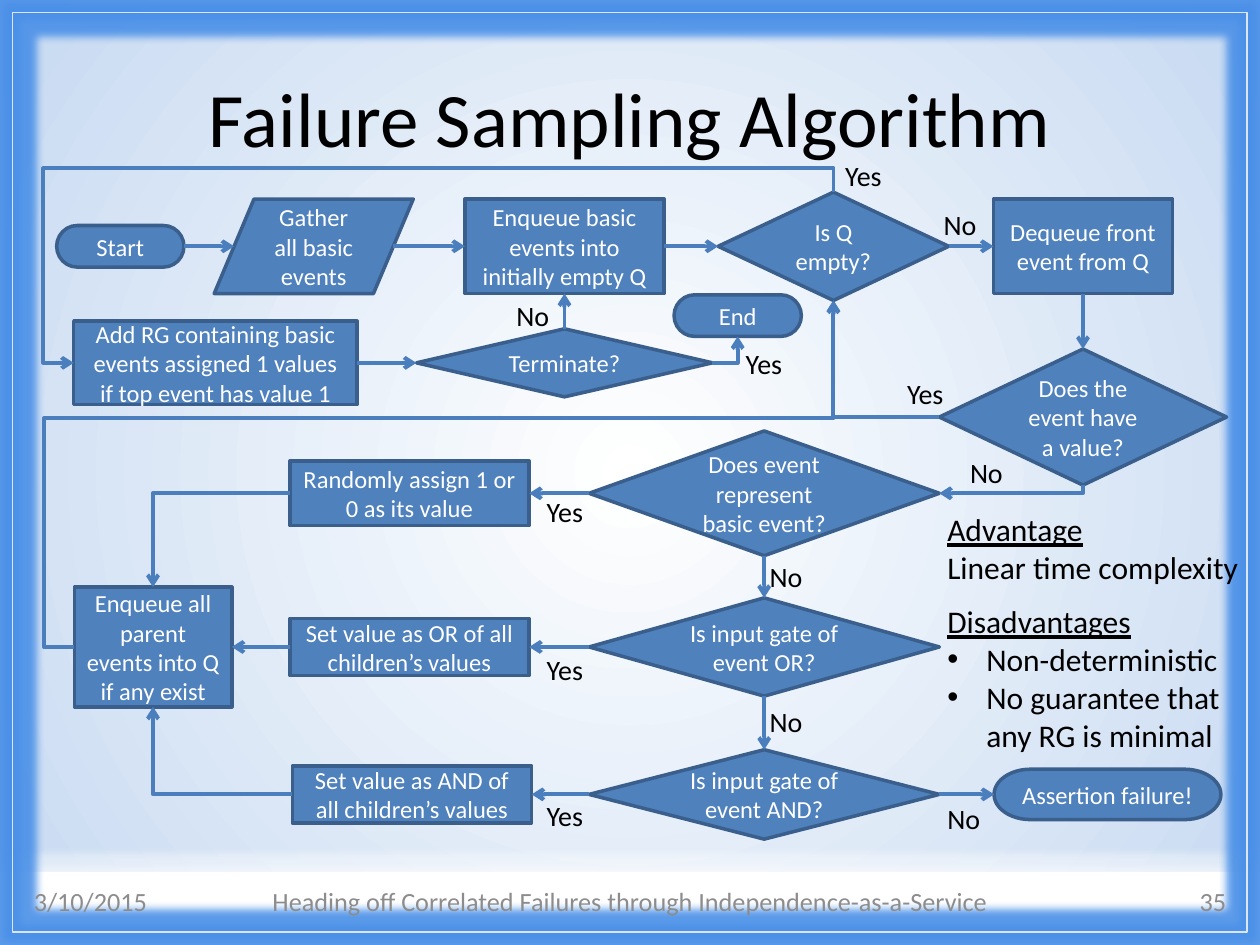
from typing import NamedTuple

from lxml.etree import SubElement
from pptx import Presentation
from pptx.dml.color import RGBColor
from pptx.enum.shapes import MSO_CONNECTOR, MSO_SHAPE
from pptx.enum.text import MSO_ANCHOR, MSO_AUTO_SIZE, PP_ALIGN
from pptx.oxml.ns import qn
from pptx.util import Emu, Inches, Pt

FONT = "Calibri"
COLORS = {
    "box": "4F81BD", "edge": "3A5F8C", "arrow": "4B7EBC", "on_box": "FFFFFF",
    "text": "000000", "footer": "8C8C8C", "strip": "FFFFFF", "frame": "DCE6F2",
    "glow": "4A90E8", "center": "FFFFFF", "rim": "C6D9F1",
}
COLUMNS, ROWS = 100, 75
WIDTH, HEIGHT = Inches(10), Inches(7.5)
CELL = WIDTH // COLUMNS

TOP, BOTTOM, LEFT, RIGHT = 0, 2, 1, 3
DECISION, PROCESS = MSO_SHAPE.FLOWCHART_DECISION, MSO_SHAPE.FLOWCHART_PROCESS
TERMINATOR, DATA = MSO_SHAPE.FLOWCHART_TERMINATOR, MSO_SHAPE.FLOWCHART_DATA

# Centres shared by the steps of the flow
FIRST, SECOND, BASIC, OR, AND = 19.55, 28.8, 39.15, 51.35, 63.05
PARENTS, ASSIGN, QUEUE, GATE, EMPTY, FRONT = 12.15, 32.5, 44.8, 60.65, 66.15, 85.95


class Step(NamedTuple):
    kind: MSO_SHAPE
    column: float
    row: float
    columns: float
    rows: float
    text: str


class Arrow(NamedTuple):
    start: str
    start_side: int
    end: str
    end_side: int


class Elbow(NamedTuple):
    start: str
    start_side: int
    end: str
    end_side: int
    bends: tuple[float, ...] = ()


class Label(NamedTuple):
    text: str
    column: float
    row: float


STEPS = {
    "start": Step(TERMINATOR, 9.55, FIRST, 10.1, 3.3, "Start"),
    "gather": Step(DATA, 24.9, FIRST, 15.8, 7.5, "Gather all basic events"),
    "enqueue": Step(PROCESS, QUEUE, FIRST, 15.8, 7.5,
                    "Enqueue basic events into initially empty Q"),
    "empty": Step(DECISION, EMPTY, FIRST, 18.3, 8.6, "Is Q empty?"),
    "dequeue": Step(PROCESS, FRONT, FIRST, 14.2, 7.5, "Dequeue front event from Q"),
    "add": Step(PROCESS, 17.1, SECOND, 22.5, 6.6,
                "Add RG containing basic events assigned 1 values if top event has value 1"),
    "terminate": Step(DECISION, QUEUE, SECOND, 23.5, 5.4, "Terminate?"),
    "end": Step(TERMINATOR, 58.55, 25.05, 10.1, 3.3, "End"),
    "valued": Step(DECISION, FRONT, 33.1, 22.8, 10.8, "Does the event have a value?"),
    "basic": Step(DECISION, GATE, BASIC, 27.8, 9.9, "Does event represent basic event?"),
    "or": Step(DECISION, GATE, OR, 27.8, 7.8, "Is input gate of event OR?"),
    "and": Step(DECISION, GATE, AND, 27.8, 7.1, "Is input gate of event AND?"),
    "random": Step(PROCESS, ASSIGN, BASIC, 19, 5.1, "Randomly assign 1 or 0 as its value"),
    "set_or": Step(PROCESS, ASSIGN, OR, 19, 4.5, "Set value as OR of all children’s values"),
    "set_and": Step(PROCESS, ASSIGN + 0.2, AND, 19, 4.5,
                    "Set value as AND of all children’s values"),
    "parents": Step(PROCESS, PARENTS, OR, 12.5, 9.5,
                    "Enqueue all parent events into Q if any exist"),
    "failure": Step(TERMINATOR, 87.9, AND, 18, 4, "Assertion failure!"),
}
RIGHTWARD = [("start", "gather"), ("gather", "enqueue"), ("enqueue", "empty"),
             ("empty", "dequeue"), ("add", "terminate"), ("and", "failure")]
LEFTWARD = [("basic", "random"), ("or", "set_or"), ("and", "set_and"), ("set_or", "parents")]
DOWNWARD = [("dequeue", "valued"), ("basic", "or"), ("or", "and")]
ARROWS = (
    [Arrow(a, RIGHT, b, LEFT) for a, b in RIGHTWARD]
    + [Arrow(a, LEFT, b, RIGHT) for a, b in LEFTWARD]
    + [Arrow(a, BOTTOM, b, TOP) for a, b in DOWNWARD]
    + [Arrow("terminate", TOP, "enqueue", BOTTOM)]
)
ELBOWS = [
    Elbow("empty", TOP, "add", LEFT, (-0.14, 1.04)),
    Elbow("parents", LEFT, "empty", BOTTOM, (-0.04, 0.66)),
    Elbow("valued", BOTTOM, "basic", RIGHT),
    Elbow("valued", LEFT, "empty", BOTTOM),
    Elbow("random", LEFT, "parents", TOP),
    Elbow("set_and", LEFT, "parents", BOTTOM),
    Elbow("terminate", RIGHT, "end", BOTTOM),
]
LABELS = [
    Label("Yes", 66.1, 12.1), Label("No", 73.9, 16), Label("Yes", 71, 29.4),
    Label("No", 76, 35.7), Label("Yes", 58.2, 27), Label("No", 40, 23.2),
    Label("Yes", 42.4, 38.8), Label("Yes", 42.4, 51.3), Label("Yes", 42.4, 62.9),
    Label("No", 60.1, 43.9), Label("No", 60.1, 55.4), Label("No", 74.2, 63.1),
]


def cells(*counts: float) -> list[Emu]:
    return [Emu(round(count * CELL)) for count in counts]


def rgb(name: str) -> RGBColor:
    return RGBColor.from_string(COLORS[name])


def add_run(paragraph, text: str, size: float, color: str, underline: bool = False) -> None:
    run = paragraph.add_run()
    run.text = text
    run.font.name, run.font.size = FONT, Pt(size)
    run.font.color.rgb = rgb(color)
    if underline:
        run.font.underline = True


def add_glow(shape, color: str, radius: Emu, percent: int) -> None:
    effects = shape._element.spPr.find(qn("a:effectLst"))
    glow = SubElement(effects, qn("a:glow"), rad=str(radius))
    tint = SubElement(glow, qn("a:srgbClr"), val=COLORS[color])
    SubElement(tint, qn("a:alpha"), val=str(percent * 1000))


def add_backdrop(slide) -> None:
    fill = slide.background.fill
    fill.gradient()
    for stop, name in zip(fill.gradient_stops, ("center", "rim")):
        stop.color.rgb = rgb(name)
    gradient = slide._element.find(".//" + qn("a:gradFill"))
    gradient.remove(gradient.find(qn("a:lin")))
    circle = SubElement(gradient, qn("a:path"), path="circle")
    SubElement(circle, qn("a:fillToRect"), l="50000", t="50000", r="50000", b="50000")

    strip = slide.shapes.add_shape(MSO_SHAPE.RECTANGLE, *cells(0, 69.2, COLUMNS, 5.8))
    frame = slide.shapes.add_shape(MSO_SHAPE.RECTANGLE, *cells(1, 1, COLUMNS - 2, ROWS - 2))
    strip.fill.solid()
    strip.fill.fore_color.rgb = rgb("strip")
    strip.line.fill.background()
    frame.fill.background()
    frame.line.color.rgb, frame.line.width = rgb("frame"), Pt(1)
    for shape, color, percent in ((strip, "strip", 40), (frame, "glow", 90)):
        shape.shadow.inherit = False
        add_glow(shape, color, Inches(0.11), percent)


def add_text_area(slide, column: float, row: float, columns: float, rows: float,
                  wrap: bool = True, anchor: MSO_ANCHOR = MSO_ANCHOR.TOP):
    frame = slide.shapes.add_textbox(*cells(column, row, columns, rows)).text_frame
    frame.word_wrap, frame.vertical_anchor = wrap, anchor
    if anchor == MSO_ANCHOR.TOP:
        frame.auto_size = MSO_AUTO_SIZE.SHAPE_TO_FIT_TEXT
    return frame


def add_step(slide, step: Step):
    shape = slide.shapes.add_shape(step.kind, *cells(
        step.column - step.columns / 2, step.row - step.rows / 2, step.columns, step.rows))
    shape.shadow.inherit = False
    shape.fill.solid()
    shape.fill.fore_color.rgb = rgb("box")
    shape.line.color.rgb, shape.line.width = rgb("edge"), Pt(2)
    frame = shape.text_frame
    frame.word_wrap, frame.vertical_anchor = True, MSO_ANCHOR.MIDDLE
    frame.paragraphs[0].alignment = PP_ALIGN.CENTER
    add_run(frame.paragraphs[0], step.text, 14, "on_box")
    return shape


def side_middle(step: Step, side: int) -> tuple[float, float]:
    reach = step.columns * (0.4 if step.kind == DATA else 0.5)
    across = {LEFT: -reach, RIGHT: reach}.get(side, 0)
    down = {TOP: -step.rows / 2, BOTTOM: step.rows / 2}.get(side, 0)
    return step.column + across, step.row + down


def style_arrow(connector) -> None:
    connector.line.color.rgb, connector.line.width = rgb("arrow"), Pt(2.25)
    SubElement(connector.line._get_or_add_ln(), qn("a:tailEnd"), type="arrow")
    SubElement(connector._element.spPr, qn("a:effectLst"))


def add_arrow(slide, arrow: Arrow, shapes: dict) -> None:
    start, end = STEPS[arrow.start], STEPS[arrow.end]
    connector = slide.shapes.add_connector(MSO_CONNECTOR.STRAIGHT, *cells(
        *side_middle(start, arrow.start_side), *side_middle(end, arrow.end_side)))
    if start.kind != DATA:
        connector.begin_connect(shapes[arrow.start], arrow.start_side)
    if end.kind != DATA:
        connector.end_connect(shapes[arrow.end], arrow.end_side)
    style_arrow(connector)


def add_elbow(slide, elbow: Elbow) -> None:
    """Draw a bent arrow; one that leaves vertically is transposed about its middle."""
    x1, y1 = side_middle(STEPS[elbow.start], elbow.start_side)
    x2, y2 = side_middle(STEPS[elbow.end], elbow.end_side)
    vertical = elbow.start_side in (TOP, BOTTOM)
    if vertical:
        x, y, dx, dy = (x1 + x2) / 2, (y1 + y2) / 2, (y2 - y1) / 2, (x2 - x1) / 2
        x1, y1, x2, y2 = x - dx, y - dy, x + dx, y + dy
    connector = slide.shapes.add_connector(MSO_CONNECTOR.ELBOW, *cells(x1, y1, x2, y2))
    properties = connector._element.spPr
    if vertical:
        properties.xfrm.flipV = not properties.xfrm.flipV
        properties.xfrm.rot = 90
    geometry = properties.find(qn("a:prstGeom"))
    geometry.set("prst", f"bentConnector{2 + len(elbow.bends)}")
    guides = geometry.find(qn("a:avLst"))
    for number, share in enumerate(elbow.bends, 1):
        SubElement(guides, qn("a:gd"), name=f"adj{number}", fmla=f"val {round(share * 100000)}")
    style_arrow(connector)


def add_verdict(slide, heading: str, lines: list[str], row: float, rows: float,
                bulleted: bool) -> None:
    frame = add_text_area(slide, 74.2, row, 25.4, rows, wrap=bulleted)
    add_run(frame.paragraphs[0], heading, 18, "text", underline=True)
    for line in lines:
        paragraph = frame.add_paragraph()
        if bulleted:
            layout = paragraph._p.get_or_add_pPr()
            layout.set("marL", str(Inches(0.31)))
            layout.set("indent", str(-Inches(0.31)))
            SubElement(layout, qn("a:buFont"), typeface="Arial")
            SubElement(layout, qn("a:buChar"), char="•")
        add_run(paragraph, line, 18, "text")


def main() -> None:
    deck = Presentation()
    deck.slide_width, deck.slide_height = WIDTH, HEIGHT
    slide = deck.slides.add_slide(deck.slide_layouts[6])
    add_backdrop(slide)
    for text, area, alignment, size, color in (
        ("Failure Sampling Algorithm", (5, 3, 90, 12.5), PP_ALIGN.CENTER, 44, "text"),
        ("3/10/2015", (1.7, 69.5, 13.3, 4), PP_ALIGN.LEFT, 15, "footer"),
        ("Heading off Correlated Failures through Independence-as-a-Service",
         (19.6, 69.5, 60.8, 4), PP_ALIGN.CENTER, 15, "footer"),
        ("35", (85, 69.5, 13.3, 4), PP_ALIGN.RIGHT, 15, "footer"),
    ):
        paragraph = add_text_area(slide, *area, anchor=MSO_ANCHOR.MIDDLE).paragraphs[0]
        paragraph.alignment = alignment
        add_run(paragraph, text, size, color)
    shapes = {key: add_step(slide, step) for key, step in STEPS.items()}
    for arrow in ARROWS:
        add_arrow(slide, arrow, shapes)
    for elbow in ELBOWS:
        add_elbow(slide, elbow)
    for label in LABELS:
        frame = add_text_area(slide, label.column, label.row, 5.2, 3.7, wrap=False)
        add_run(frame.paragraphs[0], label.text, 16, "text")
    add_verdict(slide, "Advantage", ["Linear time complexity"], 40, 7.1, bulleted=False)
    add_verdict(slide, "Disadvantages", ["Non-deterministic", "No guarantee that any RG is minimal"],
                47.3, 13.1, bulleted=True)
    deck.save("out.pptx")


if __name__ == "__main__":
    main()
